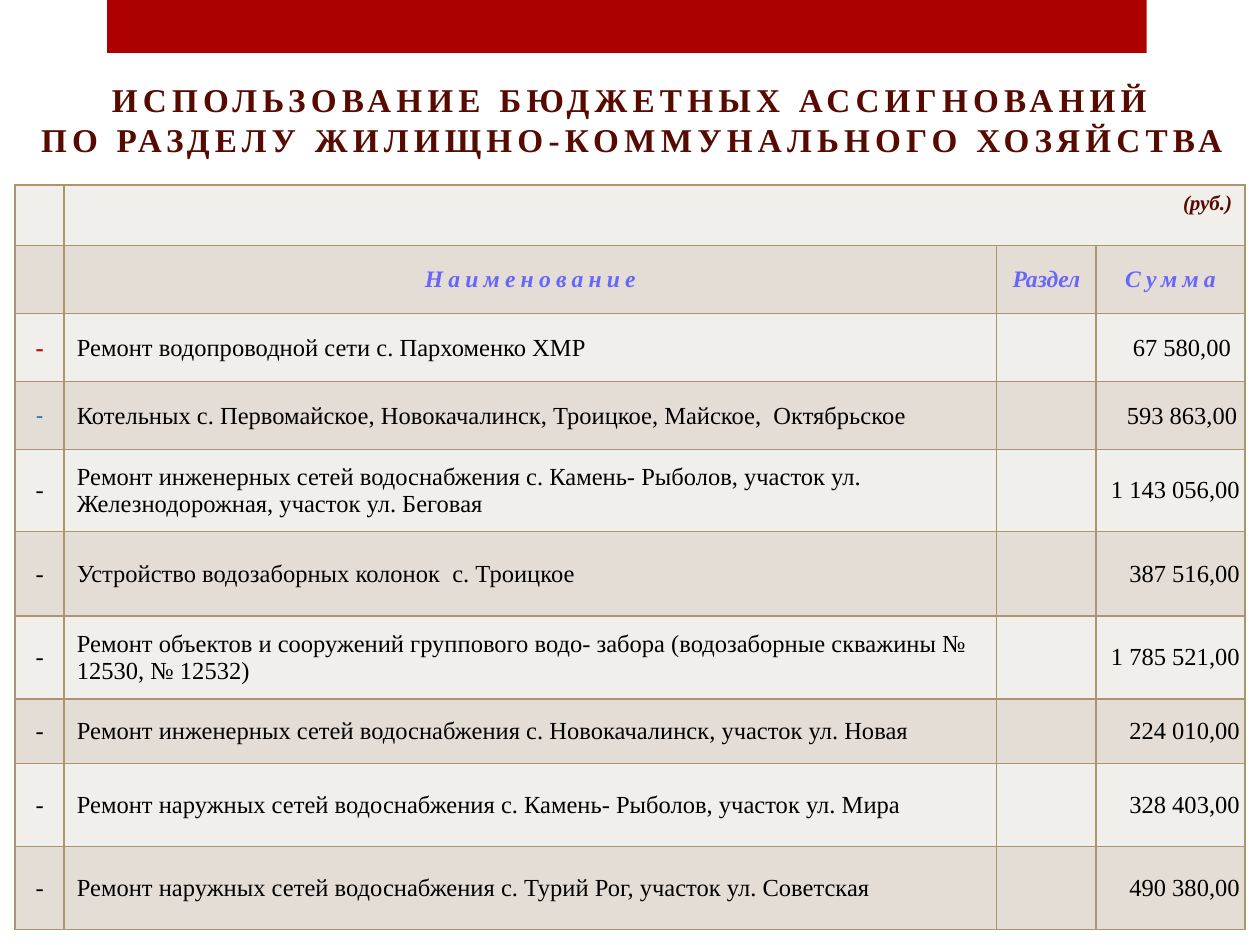
from lxml import etree
from pptx import Presentation
from pptx.dml.color import RGBColor
from pptx.enum.shapes import MSO_SHAPE
from pptx.enum.text import MSO_ANCHOR, PP_ALIGN
from pptx.oxml.ns import qn
from pptx.util import Inches, Pt

LEFT, CENTER, RIGHT = PP_ALIGN.LEFT, PP_ALIGN.CENTER, PP_ALIGN.RIGHT
MIDDLE, TOP, BOTTOM = MSO_ANCHOR.MIDDLE, MSO_ANCHOR.TOP, MSO_ANCHOR.BOTTOM
RECT = MSO_SHAPE.RECTANGLE

FONT = "Times New Roman"
RED, BROWN, VIOLET, EDGE = "AD0101", "560A00", "6666FF", "AC956E"
BANDS = ("F1EFEB", "E3DDD5")

COLS = (0.39, 7.4, 0.79, 1.18)
ROWS = (0.48, 0.54, 0.54, 0.54, 0.65, 0.67, 0.66, 0.51, 0.66, 0.66)

TITLE = ("ИСПОЛЬЗОВАНИЕ БЮДЖЕТНЫХ АССИГНОВАНИЙ",
         "ПО РАЗДЕЛУ ЖИЛИЩНО-КОММУНАЛЬНОГО ХОЗЯЙСТВА")
WORKS = (
    ("Ремонт водопроводной сети с. Пархоменко ХМР", "67 580,00"),
    ("Котельных с. Первомайское, Новокачалинск, Троицкое, Майское,  Октябрьское",
     "593 863,00"),
    ("Ремонт инженерных сетей водоснабжения с. Камень- Рыболов, участок ул. "
     "Железнодорожная, участок ул. Беговая", "1 143 056,00"),
    ("Устройство водозаборных колонок  с. Троицкое", "387 516,00"),
    ("Ремонт объектов и сооружений группового водо- забора "
     "(водозаборные скважины № 12530, № 12532)", "1 785 521,00"),
    ("Ремонт инженерных сетей водоснабжения с. Новокачалинск, участок ул. Новая",
     "224 010,00"),
    ("Ремонт наружных сетей водоснабжения с. Камень- Рыболов, участок ул. Мира",
     "328 403,00"),
    ("Ремонт наружных сетей водоснабжения с. Турий Рог, участок ул. Советская",
     "490 380,00"),
)

# Text formats
BODY = {"size": Pt(14), "bold": False, "italic": False}
HEAD = {"size": Pt(13.5), "bold": True, "italic": True}
UNIT = {"size": Pt(12), "bold": True, "italic": True}
MAIN = {"size": Pt(19), "bold": True}
# Dashes that differ from the body text: format, colour, spacing
MARKS = {0: (BODY | {"bold": True}, "C00000", 0),
         1: (BODY | {"size": Pt(12), "italic": True}, "0070C0", 3)}
# Sums set a little further from the right edge
INSETS = {0: 0.11, 1: 0.06}


def color(code):
    return RGBColor.from_string(code)


def write(frame, lines, style, tint="000000", align=LEFT, space=0):
    para = frame.paragraphs[0]
    para.alignment = align
    for i, line in enumerate(lines):
        if i:
            para.add_line_break()
        run = para.add_run()
        run.text = line
        for name, value in style.items():
            setattr(run.font, name, value)
        run.font.name = FONT
        run.font.color.rgb = color(tint)
        if space:
            run.font._element.set("spc", str(space * 100))


def add_bar(slide):
    bar = slide.shapes.add_shape(RECT, Inches(0.85), 0, Inches(8.25), Inches(0.42))
    bar.shadow.inherit = False
    bar.fill.solid()
    bar.fill.fore_color.rgb = color(RED)
    bar.line.fill.background()


def add_title(slide):
    box = slide.shapes.add_textbox(Inches(0.16), Inches(0.44), Inches(9.72), Inches(0.87))
    box.text_frame.word_wrap = True
    box.text_frame.vertical_anchor = BOTTOM
    write(box.text_frame, TITLE, MAIN, BROWN, CENTER, 3)


def edge(cell):
    props = cell._tc.get_or_add_tcPr()
    for side in ("lnL", "lnR", "lnT", "lnB"):
        line = etree.SubElement(props, qn(f"a:{side}"), w=str(Pt(1)))
        fill = etree.SubElement(line, qn("a:solidFill"))
        etree.SubElement(fill, qn("a:srgbClr"), val=EDGE)


def add_grid(slide):
    frame = slide.shapes.add_table(
        len(ROWS), len(COLS), Inches(0.12), Inches(1.47),
        Inches(sum(COLS)), Inches(sum(ROWS)))
    grid = frame.table
    grid.first_row = grid.horz_banding = False
    for col, width in zip(grid.columns, COLS):
        col.width = Inches(width)
    for i, (row, height) in enumerate(zip(grid.rows, ROWS)):
        row.height = Inches(height)
        for cell in row.cells:
            edge(cell)
            cell.fill.solid()
            cell.fill.fore_color.rgb = color(BANDS[i % 2])
            cell.vertical_anchor = MIDDLE if i else TOP
    return grid


def fill_grid(grid):
    # Unit line and headings
    unit = grid.cell(0, 1)
    unit.merge(grid.cell(0, 3))
    write(unit.text_frame, ["(руб.)"], UNIT, BROWN, RIGHT)
    heads = (("Наименование", 3), ("Раздел", 0), ("Сумма", 3))
    for col, (text, space) in enumerate(heads, 1):
        write(grid.cell(1, col).text_frame, [text], HEAD, VIOLET, CENTER, space)

    # Works and sums
    for i, (work, total) in enumerate(WORKS):
        mark, name, _, cost = grid.rows[i + 2].cells
        style, tint, space = MARKS.get(i, (BODY, "000000", 0))
        write(mark.text_frame, ["-"], style, tint, CENTER, space)
        write(name.text_frame, [work], BODY)
        cost.margin_right = Inches(INSETS.get(i, 0.04))
        write(cost.text_frame, [total], BODY, align=RIGHT)


def main():
    deck = Presentation()
    deck.slide_width, deck.slide_height = Inches(10), Inches(7.5)
    slide = deck.slides.add_slide(deck.slide_layouts[6])
    add_bar(slide)
    add_title(slide)
    fill_grid(add_grid(slide))
    deck.save("out.pptx")


if __name__ == "__main__":
    main()
